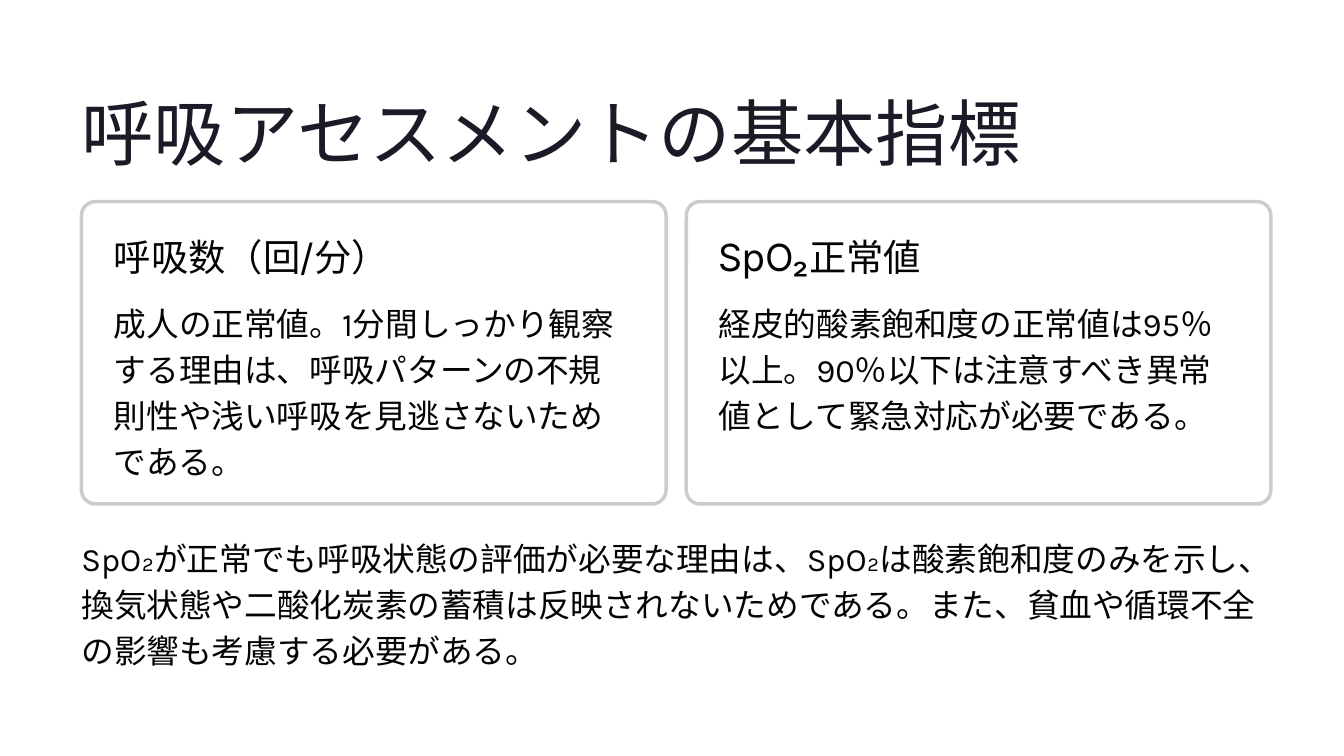
from lxml.etree import SubElement
from pptx import Presentation
from pptx.dml.color import RGBColor
from pptx.enum.shapes import MSO_SHAPE
from pptx.oxml.ns import qn
from pptx.util import Inches, Pt

TITLE = "呼吸アセスメントの基本指標"
CARDS = [
    ("呼吸数（回/分）",
     "成人の正常値。1分間しっかり観察する理由は、呼吸パターンの不規則性や浅い呼吸を見逃さないためである。"),
    ("SpO₂正常値",
     "経皮的酸素飽和度の正常値は95％以上。90％以下は注意すべき異常値として緊急対応が必要である。"),
]
NOTE = (
    "SpO₂が正常でも呼吸状態の評価が必要な理由は、SpO₂は酸素飽和度のみを示し、"
    "換気状態や二酸化炭素の蓄積は反映されないためである。"
    "また、貧血や循環不全の影響も考慮する必要がある。"
)
COLORS = {"title": "1B1B27", "text": "030303", "card": "FFFFFF", "border": "CCCCCC"}
STYLES = {
    "title": ("Inter", 62, 77.5, "title", False),
    "heading": ("Inter", 32, 38.5, "text", False),
    "body": ("Karla", 28, 39.5, "text", True),
}
LEFT, CARD_TOP = 0.97, 2.4
CARD_WIDTH, CARD_HEIGHT, CARD_GAP = 6.96, 3.6, 0.24
PADDING = 0.385


def color(name):
    return RGBColor.from_string(COLORS[name])


def add_text(page, text, style, left, top, width, height):
    face, size, spacing, tone, wrap = STYLES[style]
    box = page.shapes.add_textbox(Inches(left), Inches(top), Inches(width), Inches(height))
    frame = box.text_frame
    frame.margin_left = frame.margin_top = frame.margin_right = frame.margin_bottom = 0
    frame.word_wrap = wrap
    para = frame.paragraphs[0]
    para.text = text
    para.line_spacing = Pt(spacing)
    para.font.name = face
    para.font.size = Pt(size)
    para.font.color.rgb = color(tone)


def add_card(page, left, heading, body):
    card = page.shapes.add_shape(
        MSO_SHAPE.ROUNDED_RECTANGLE,
        Inches(left), Inches(CARD_TOP), Inches(CARD_WIDTH), Inches(CARD_HEIGHT),
    )
    card.adjustments[0] = 0.046
    card.shadow.inherit = False
    card.fill.solid()
    card.fill.fore_color.rgb = color("card")
    fill_color = card.fill._xPr.find(qn("a:solidFill"))[0]
    SubElement(fill_color, qn("a:alpha"), val="95000")
    card.line.color.rgb = color("border")
    card.line.width = Pt(3)
    text_left = left + PADDING
    add_text(page, heading, "heading", text_left, CARD_TOP + PADDING, 4.37, 0.61)
    add_text(page, body, "body", text_left, 3.53, CARD_WIDTH - 2 * PADDING, 1.88)


def main():
    deck = Presentation()
    deck.slide_width, deck.slide_height = Inches(16), Inches(9)
    page = deck.slides.add_slide(deck.slide_layouts[6])
    add_text(page, TITLE, "title", LEFT, 1.01, 11.19, 1.08)
    for index, (heading, body) in enumerate(CARDS):
        add_card(page, LEFT + index * (CARD_WIDTH + CARD_GAP), heading, body)
    add_text(page, NOTE, "body", LEFT, 6.33, 14.07, 1.66)
    deck.save("out.pptx")


if __name__ == "__main__":
    main()
